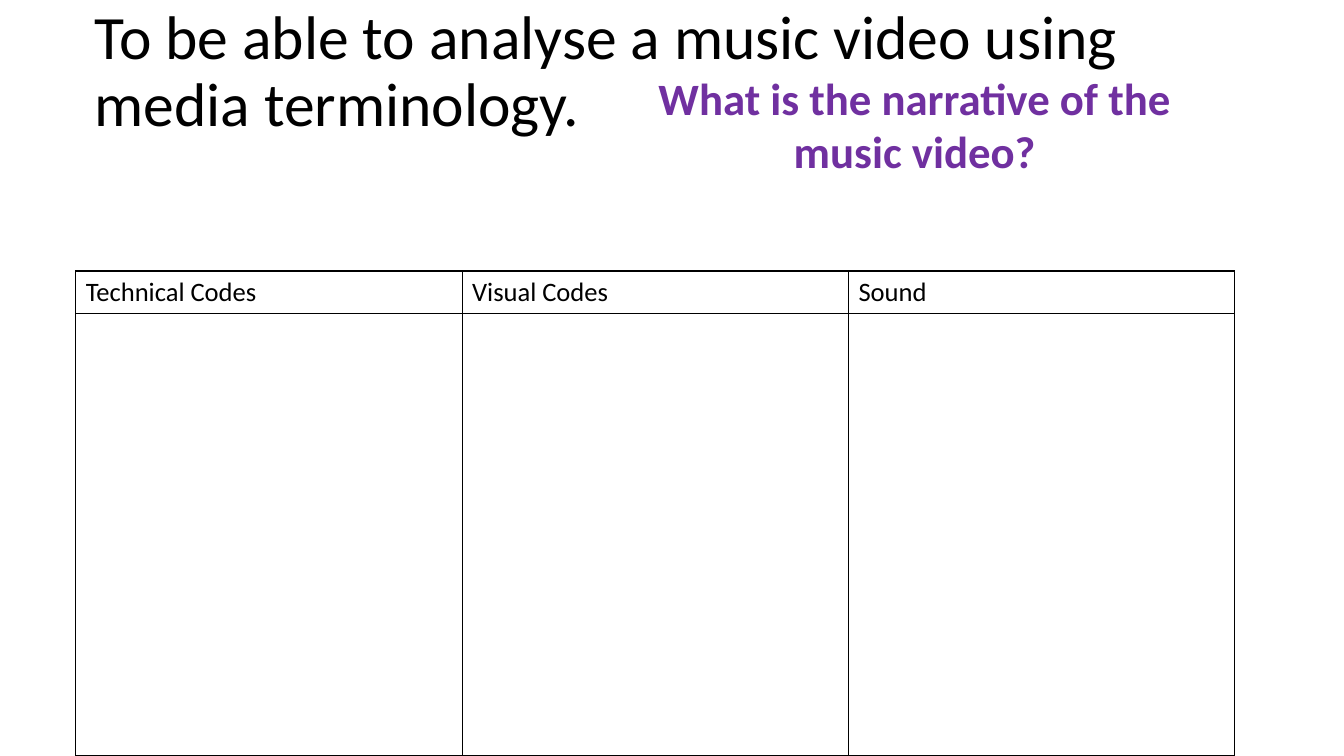
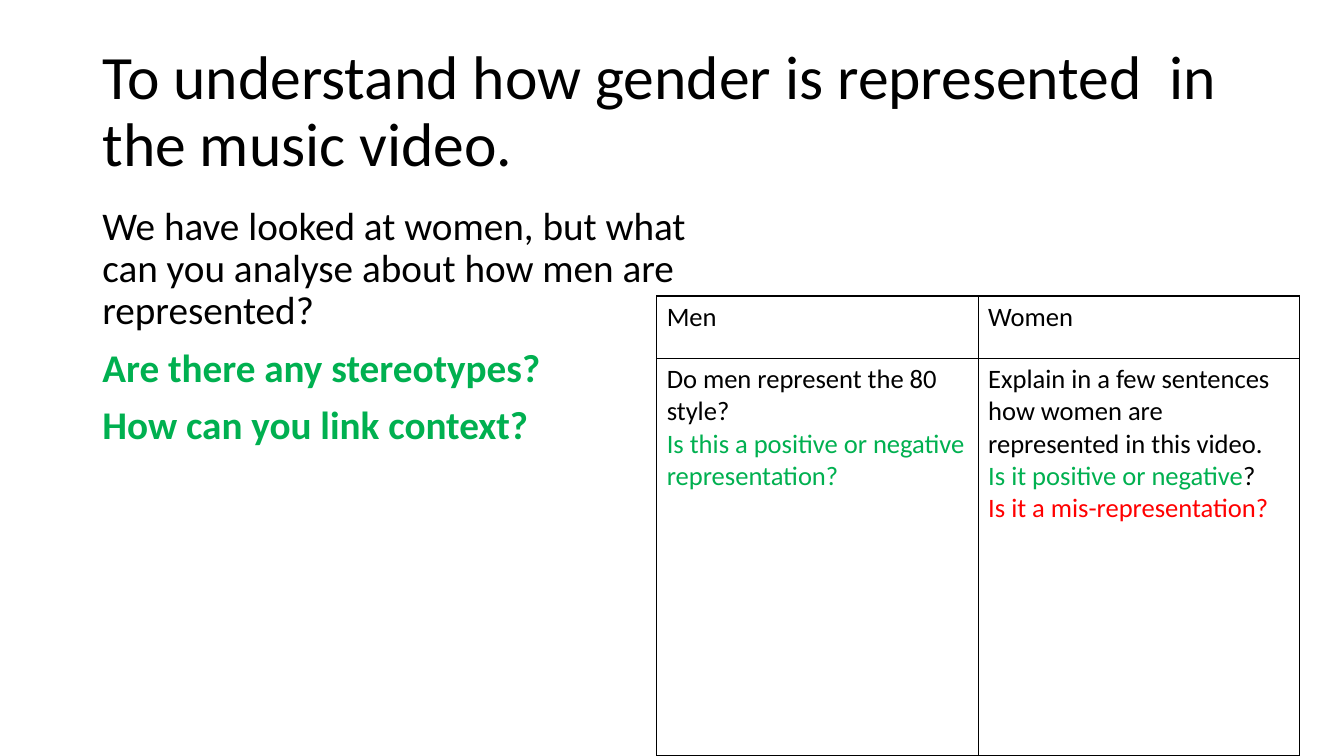
from lxml import etree
from pptx import Presentation
from pptx.dml.color import RGBColor
from pptx.enum import text
from pptx.oxml import ns
from pptx.util import Cm, Pt

INK = {"black": "000000", "green": "00B050", "red": "FF0000", "purple": "7030A0"}
FACE = "Calibri"
TITLE_ONLY = 5


def style(font, size, tint="black", bold=False):
    font.name = FACE
    font.size = Pt(size)
    font.bold = bold
    font.color.rgb = RGBColor.from_string(INK[tint])


def write(frame, lines, size, bold=False, align=text.PP_ALIGN.LEFT, space=1.0, gap=0):
    frame.word_wrap = True
    for i, line in enumerate(lines):
        para = frame.paragraphs[0] if i == 0 else frame.add_paragraph()
        para.alignment = align
        para.line_spacing = space
        para.space_before = Pt(gap if i else 0)
        style(para.font, size, line[0][1], bold or len(line[0]) > 2)
        for words, tint, *_ in line:
            run = para.add_run()
            run.text = words
            if tint != line[0][1]:
                run.font.color.rgb = RGBColor.from_string(INK[tint])


def add_page(deck, title, left, top):
    page = deck.slides.add_slide(deck.slide_layouts[TITLE_ONLY])
    head = page.shapes.title
    head.left, head.top, head.width, head.height = Cm(left), Cm(top), Cm(29.21), Cm(3.68)
    frame = head.text_frame
    frame.vertical_anchor = text.MSO_ANCHOR.MIDDLE
    write(frame, [[(title, "black")]], 44, space=0.9)
    frame.auto_size = text.MSO_AUTO_SIZE.NONE
    return page


def add_text(page, box, lines, size, **look):
    shape = page.shapes.add_textbox(*map(Cm, box))
    write(shape.text_frame, lines, size, **look)


def add_edges(cell):
    props = cell._tc.get_or_add_tcPr()
    for i, side in enumerate("LRTB"):
        edge = etree.Element(ns.qn("a:ln" + side), w=str(Pt(1)))
        fill = etree.SubElement(edge, ns.qn("a:solidFill"))
        etree.SubElement(fill, ns.qn("a:srgbClr"), val=INK["black"])
        props.insert(i, edge)


def add_grid(page, left, top, width, rows, cells):
    count = len(cells[0])
    frame = page.shapes.add_table(
        len(rows), count, Cm(left), Cm(top), Cm(width), Cm(sum(rows)))
    grid = frame.table
    grid.first_row = grid.horz_banding = False
    for col in grid.columns:
        col.width = Cm(width / count)
    for r, (row, line) in enumerate(zip(rows, cells)):
        grid.rows[r].height = Cm(row)
        for c, lines in enumerate(line):
            cell = grid.cell(r, c)
            cell.fill.background()
            add_edges(cell)
            write(cell.text_frame, lines, 19)


def heads(*names):
    return [[[(name, "black")]] for name in names]


def add_codes(deck):
    page = add_page(
        deck, "To be able to analyse a music video using media terminology.", 2.13, 0)
    add_grid(page, 1.91, 6.83, 29.21, [1.05, 11.15],
             [heads("Technical Codes", "Visual Codes", "Sound"), [[], [], []]])
    add_text(page, (15.37, 1.65, 15.37, 3),
             [[("What is the narrative of the music video?", "purple")]],
             32, bold=True, align=text.PP_ALIGN.CENTER)


def add_gender(deck):
    page = add_page(
        deck, "To understand how gender is represented  in the music video.", 2.33, 1.01)
    add_text(page, (2.33, 5.07, 15.93, 10.2), [
        [("We have looked at women, but what can you analyse about how men are "
          "represented?", "black")],
        [("Are there any stereotypes?", "green", "bold")],
        [("How can you link context?", "green", "bold")],
    ], 28, space=0.9, gap=10.7)
    men = [
        [("Do men represent the 80 style?", "black")],
        [("Is this a positive or negative representation?", "green")],
    ]
    women = [
        [("Explain in a few sentences how women are represented in this video.", "black")],
        [("Is it positive or negative", "green"), ("?", "black")],
        [("Is it a mis-representation?", "red")],
    ]
    add_grid(page, 16.55, 7.46, 16.2, [1.57, 10], [heads("Men", "Women"), [men, women]])


def main():
    deck = Presentation()
    deck.slide_width, deck.slide_height = Cm(33.87), Cm(19.05)
    add_codes(deck)
    add_gender(deck)
    deck.save("out.pptx")


if __name__ == "__main__":
    main()
